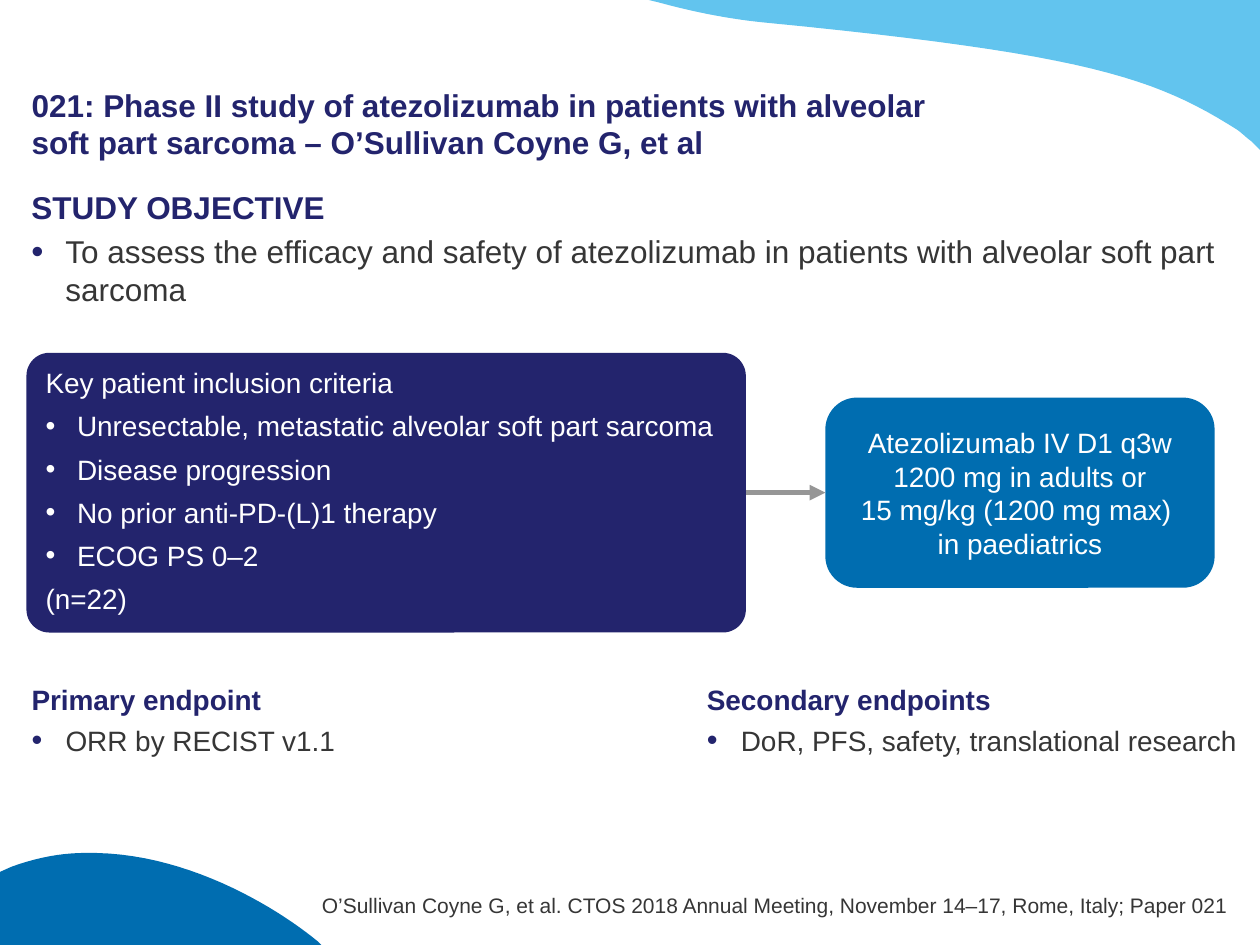
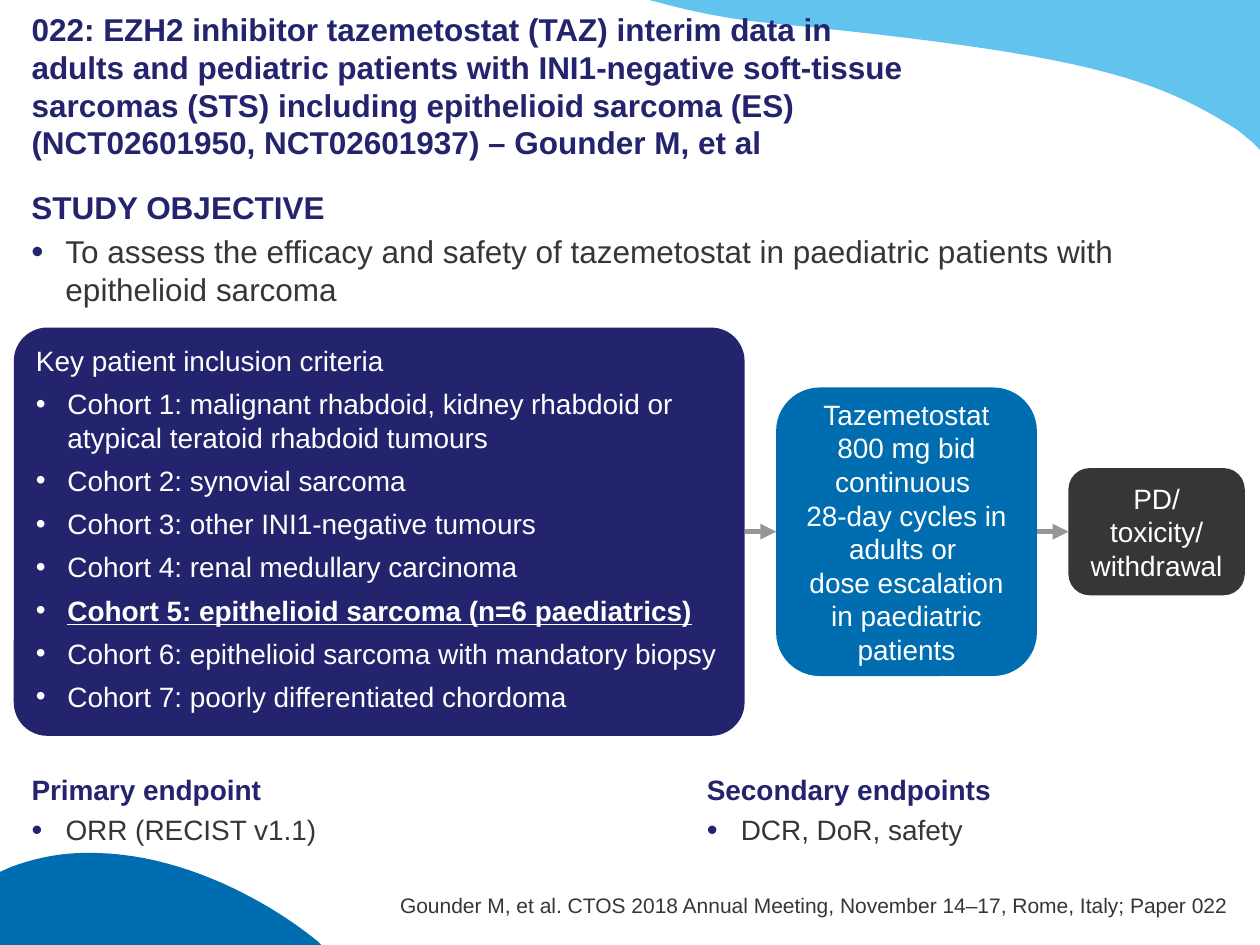
from lxml.etree import SubElement
from pptx import Presentation
from pptx.dml.color import RGBColor
from pptx.enum.shapes import MSO_CONNECTOR, MSO_SHAPE
from pptx.enum.text import MSO_ANCHOR, MSO_AUTO_SIZE, PP_ALIGN
from pptx.oxml.ns import qn
from pptx.util import Emu, Inches, Pt

FONT = "Arial"
NAVY, BLUE, SKY = "23246D", "006DB0", "62C4EE"
CHARCOAL, GREY, WHITE = "363636", "969696", "FFFFFF"
COLUMNS, ROWS = 40, 30
CELL = Inches(0.25)
MARGIN = 1
TITLE_LAYOUT = 5

TOP_WAVE = [
    [(20.6, 0)],
    [(40, 0)],
    [(40, 4.76)],
    [(39.72, 4.48)],
    [(39.56, 4.36), (39.44, 4.24), (39.28, 4.12)],
    [(36.68, 2.48), (34.56, 1.72), (24.32, 0.72)],
    [(23.08, 0.6), (21.96, 0.36), (20.92, 0.08)],
]
BOTTOM_WAVE = [
    [(2.68, 27.08)],
    [(5.8, 27), (8.72, 28.76), (10.08, 29.88)],
    [(10.2, 30)],
    [(0, 30)],
    [(0, 27.68)],
    [(0.36, 27.52)],
    [(1.12, 27.24), (1.92, 27.08), (2.68, 27.08)],
]


def cells(*counts):
    return [Emu(round(count * CELL)) for count in counts]


def paint(fill, color):
    fill.solid()
    fill.fore_color.rgb = RGBColor.from_string(color)


def curve_points(start, first, second, end, steps=24):
    for step in range(1, steps + 1):
        t = step / steps
        weights = ((1 - t) ** 3, 3 * t * (1 - t) ** 2, 3 * t * t * (1 - t), t ** 3)
        points = (start, first, second, end)
        yield tuple(sum(w * p[axis] for w, p in zip(weights, points)) for axis in (0, 1))


def add_wave(page, segments, color, shape_id):
    outline = list(segments[0])
    for segment in segments[1:]:
        outline += curve_points(outline[-1], *segment) if len(segment) == 3 else segment
    builder = page.shapes.build_freeform(*cells(*outline[0]))
    builder.add_line_segments([cells(*point) for point in outline[1:]], close=True)
    wave = builder.convert_to_shape()
    wave.shadow.inherit = False
    paint(wave.fill, color)
    wave.line.fill.background()
    wave.element.nvSpPr.cNvPr.set("id", str(shape_id))
    page.slide_layout.shapes.element.insert(2, wave.element)


def set_frame(frame, anchor=MSO_ANCHOR.TOP, insets=(0, 0.05, 0, 0.05)):
    frame.word_wrap = True
    frame.auto_size = MSO_AUTO_SIZE.NONE
    frame.vertical_anchor = anchor
    left, top, right, bottom = [Inches(inset) for inset in insets]
    frame.margin_left, frame.margin_top = left, top
    frame.margin_right, frame.margin_bottom = right, bottom


def add_bullet(para, indent, color, percent):
    properties = para._p.get_or_add_pPr()
    properties.set("marL", str(Inches(indent)))
    properties.set("indent", str(-Inches(indent)))
    SubElement(SubElement(properties, qn("a:buClr")), qn("a:srgbClr"), val=color)
    SubElement(properties, qn("a:buSzPct"), val=str(percent * 1000))
    SubElement(properties, qn("a:buFont"), typeface=FONT)
    SubElement(properties, qn("a:buChar"), char="•")


def write(frame, text, size, color, bold=False, underline=False, align=PP_ALIGN.LEFT,
          after=0, bullet=None):
    first = frame.paragraphs[0]
    para = frame.add_paragraph() if first.runs else first
    para.text = text
    para.alignment = align
    para.space_before, para.space_after = Pt(0), Pt(after)
    if bullet:
        add_bullet(para, **bullet)
    for span in para.runs:
        font = span.font
        font.name, font.size, font.bold, font.underline = FONT, Pt(size), bold, underline
        font.color.rgb = RGBColor.from_string(color)
    for line_break in para._p.findall(qn("a:br")):
        SubElement(line_break, qn("a:rPr"), sz=str(size * 100))


def add_title(page, text, width):
    title = page.shapes.title
    title.left, title.top, title.width, title.height = cells(MARGIN, 1, width, 4.12)
    set_frame(title.text_frame, MSO_ANCHOR.BOTTOM, (0, 0.05, 0, 0))
    write(title.text_frame, text, 18, NAVY, bold=True)


def add_section(page, left, top, width, height, heading, point, size):
    frame = page.shapes.add_textbox(*cells(left, top, width, height)).text_frame
    set_frame(frame)
    write(frame, heading, size, NAVY, bold=True, after=4)
    write(frame, point, size, CHARCOAL, after=4,
          bullet=dict(indent=0.27, color=NAVY, percent=110))


def add_endpoints(page, top, primary, secondary):
    add_section(page, MARGIN, top, 19.8, 3, "Primary endpoint", primary, 16)
    add_section(page, 22.44, top, 17.4, 3, "Secondary endpoints", secondary, 16)


def add_citation(page, text):
    frame = page.shapes.add_textbox(*cells(9, 28.32, 30, 0.8)).text_frame
    set_frame(frame, MSO_ANCHOR.BOTTOM, (0, 0, 0, 0))
    write(frame, text, 12, CHARCOAL, align=PP_ALIGN.RIGHT)


def add_box(page, left, middle, width, height, color, corner):
    bounds = cells(left, middle - height / 2, width, height)
    box = page.shapes.add_shape(MSO_SHAPE.ROUNDED_RECTANGLE, *bounds)
    box.shadow.inherit = False
    box.adjustments[0] = corner
    paint(box.fill, color)
    box.line.fill.background()
    return box


def add_criteria(page, left, middle, width, height, points, closing=None, stressed=None):
    box = add_box(page, left, middle, width, height, NAVY, 0.082)
    frame = box.text_frame
    set_frame(frame, insets=(0.1, 0.05, 0.1, 0.05))
    write(frame, "Key patient inclusion criteria", 16, WHITE, after=5.5)
    for point in points:
        strong = point == stressed
        write(frame, point, 16, WHITE, bold=strong, underline=strong, after=5.5,
              bullet=dict(indent=0.25, color=WHITE, percent=100))
    if closing:
        write(frame, closing, 16, WHITE, after=5.5)
    return box


def add_step(page, left, middle, width, height, paragraphs, color):
    box = add_box(page, left, middle, width, height, color, 0.167)
    set_frame(box.text_frame, MSO_ANCHOR.MIDDLE, (0.1, 0, 0.1, 0))
    for text in paragraphs:
        write(box.text_frame, text, 16, WHITE, align=PP_ALIGN.CENTER)
    return box


def add_arrow(page, source, target):
    arrow = page.shapes.add_connector(MSO_CONNECTOR.STRAIGHT, 0, 0, 0, 0)
    arrow.begin_connect(source, 3)
    arrow.end_connect(target, 1)
    paint(arrow.line.fill, GREY)
    arrow.line.width = Pt(3)
    properties = arrow.element.spPr
    SubElement(properties.find(qn("a:ln")), qn("a:tailEnd"), type="triangle")
    SubElement(properties, qn("a:effectLst"))


def add_flow(page, left, middle, gap, criteria, steps):
    previous = add_criteria(page, left, middle, **criteria)
    left += criteria["width"] + gap
    for step in steps:
        box = add_step(page, left, middle, **step)
        add_arrow(page, previous, box)
        previous = box
        left += step["width"] + gap


def add_study(deck, title, title_width, objective, citation):
    page = deck.slides.add_slide(deck.slide_layouts[TITLE_LAYOUT])
    add_title(page, title, title_width)
    add_section(page, MARGIN, 5.76, COLUMNS - 2 * MARGIN, 4.4,
                "STUDY OBJECTIVE", objective, 18)
    add_citation(page, citation)
    return page


def main():
    deck = Presentation()
    deck.slide_width, deck.slide_height = cells(COLUMNS, ROWS)

    atezolizumab = add_study(
        deck,
        "021: Phase II study of atezolizumab in patients with alveolar soft part sarcoma "
        "– O’Sullivan Coyne G, et al",
        29.4,
        "To assess the efficacy and safety of atezolizumab in patients with alveolar "
        "soft part sarcoma",
        "O’Sullivan Coyne G, et al. CTOS 2018 Annual Meeting, November 14–17, Rome, Italy; "
        "Paper 021",
    )
    add_wave(atezolizumab, BOTTOM_WAVE, BLUE, 101)
    add_wave(atezolizumab, TOP_WAVE, SKY, 102)
    add_flow(
        atezolizumab, left=0.84, middle=15.64, gap=2.52,
        criteria=dict(width=22.84, height=8.88, closing="(n=22)", points=[
            "Unresectable, metastatic alveolar soft part sarcoma",
            "Disease progression",
            "No prior anti-PD-(L)1 therapy",
            "ECOG PS 0–2",
        ]),
        steps=[dict(width=12.36, height=6.04, color=BLUE, paragraphs=[
            "Atezolizumab IV D1 q3w\n1200 mg in adults or",
            "15 mg/kg (1200 mg max) \nin paediatrics",
        ])],
    )
    add_endpoints(atezolizumab, 21.48, "ORR by RECIST v1.1",
                  "DoR, PFS, safety, translational research")

    tazemetostat = add_study(
        deck,
        "022: EZH2 inhibitor tazemetostat (TAZ) interim data in adults and pediatric patients "
        "with INI1-negative soft-tissue sarcomas (STS) including epithelioid sarcoma (ES) "
        "(NCT02601950, NCT02601937) – Gounder M, et al",
        28.36,
        "To assess the efficacy and safety of tazemetostat in paediatric patients with "
        "epithelioid sarcoma",
        "Gounder M, et al. CTOS 2018 Annual Meeting, November 14–17, Rome, Italy; Paper 022",
    )
    paediatric_cohort = "Cohort 5: epithelioid sarcoma (n=6 paediatrics)"
    add_flow(
        tazemetostat, left=0.44, middle=16.88, gap=1,
        criteria=dict(width=23.2, height=12.96, stressed=paediatric_cohort, points=[
            "Cohort 1: malignant rhabdoid, kidney rhabdoid or atypical teratoid rhabdoid tumours",
            "Cohort 2: synovial sarcoma",
            "Cohort 3: other INI1-negative tumours",
            "Cohort 4: renal medullary carcinoma",
            paediatric_cohort,
            "Cohort 6: epithelioid sarcoma with mandatory biopsy",
            "Cohort 7: poorly differentiated chordoma",
        ]),
        steps=[
            dict(width=8.28, height=9.16, color=BLUE, paragraphs=[
                "Tazemetostat 800 mg bid continuous \n28-day cycles in adults or \n"
                "dose escalation in paediatric patients",
            ]),
            dict(width=5.6, height=4.04, color=CHARCOAL,
                 paragraphs=["PD/\ntoxicity/\nwithdrawal"]),
        ],
    )
    add_endpoints(tazemetostat, 24.32, "ORR (RECIST v1.1)", "DCR, DoR, safety")

    deck.save("out.pptx")


if __name__ == "__main__":
    main()
